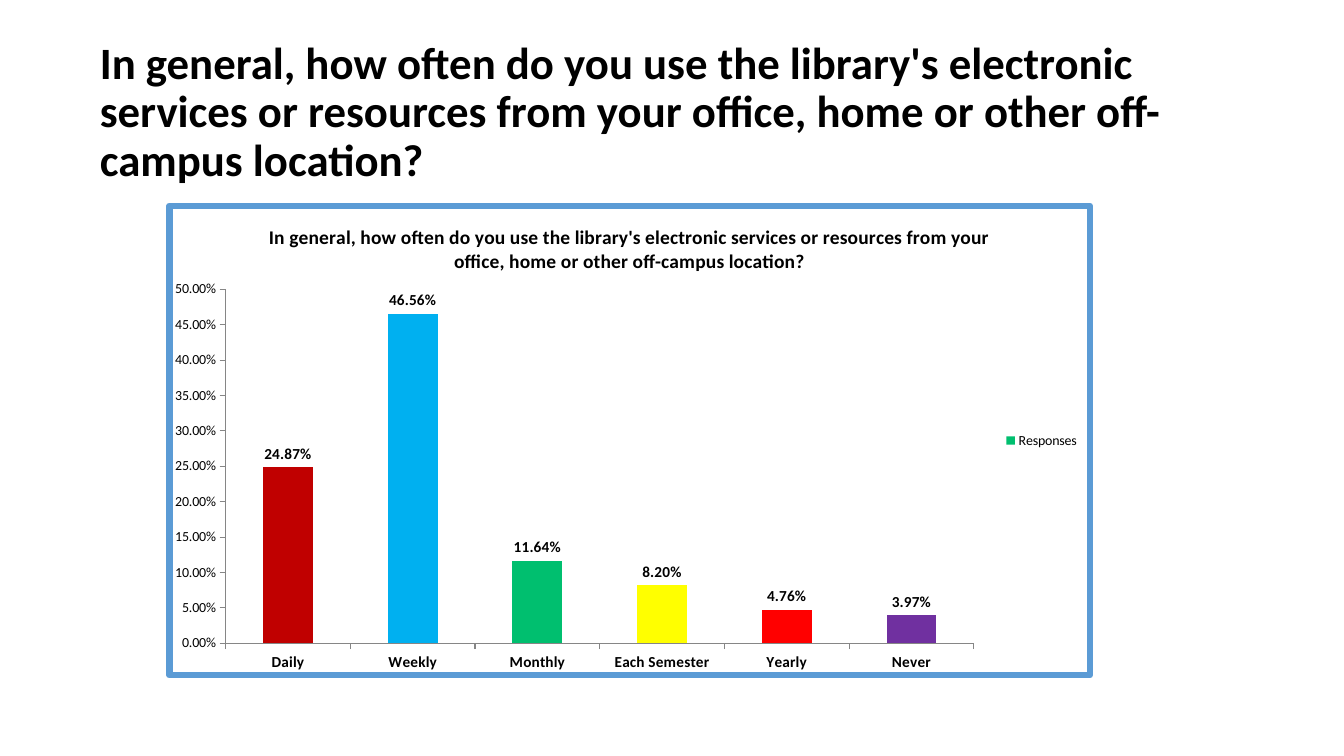
from lxml import etree
from pptx import Presentation
from pptx.chart.data import CategoryChartData
from pptx.dml.color import RGBColor
from pptx.enum.chart import XL_CHART_TYPE as ChartType
from pptx.enum.chart import XL_LABEL_POSITION as LabelPosition
from pptx.enum.chart import XL_LEGEND_POSITION as LegendPosition
from pptx.enum.chart import XL_TICK_MARK as TickMark
from pptx.enum.text import MSO_ANCHOR, MSO_AUTO_SIZE, PP_ALIGN
from pptx.oxml import parse_xml
from pptx.oxml.ns import nsdecls, qn
from pptx.util import Inches, Pt

COLORS = {
    "text": "000000",
    "axis": "868686",
    "border": "5B9BD5",
    "responses": "00BF6F",
    "Daily": "C00000",
    "Weekly": "00B0F0",
    "Each Semester": "FFFF00",
    "Yearly": "FF0000",
    "Never": "7030A0",
}
SHARES = {
    "Daily": 0.2487,
    "Weekly": 0.4656,
    "Monthly": 0.1164,
    "Each Semester": 0.082,
    "Yearly": 0.0476,
    "Never": 0.0397,
}
QUESTION = (
    "In general, how often do you use the library's electronic services "
    "or resources from your office, home or other off-campus location?"
)
PERCENT = "0.00%"


def style_font(font, size, bold=False):
    font.name = "Calibri"
    font.size = Pt(size)
    font.bold = bold
    font.color.rgb = RGBColor.from_string(COLORS["text"])


def write_text(frame, text, size, bold=True, align=PP_ALIGN.LEFT, spacing=None):
    paragraph = frame.paragraphs[0]
    paragraph.alignment = align
    paragraph.line_spacing = spacing
    run = paragraph.add_run()
    run.text = text
    style_font(run.font, size, bold)


prs = Presentation()
prs.slide_width = Inches(13.33)
prs.slide_height = Inches(7.5)
slide = prs.slides.add_slide(prs.slide_layouts[5])

# Heading
heading = slide.shapes.title
heading.left, heading.top = Inches(0.89), Inches(0.4)
heading.width, heading.height = Inches(11.53), Inches(1.45)
heading.text_frame.word_wrap = True
heading.text_frame.auto_size = MSO_AUTO_SIZE.NONE
heading.text_frame.vertical_anchor = MSO_ANCHOR.MIDDLE
write_text(heading.text_frame, QUESTION, size=32, spacing=0.9)

# Chart of answers
answers = CategoryChartData(number_format=PERCENT)
answers.categories = list(SHARES)
answers.add_series("Responses", list(SHARES.values()))
chart = slide.shapes.add_chart(
    ChartType.COLUMN_CLUSTERED,
    Inches(1.65), Inches(2.01), Inches(9.19), Inches(4.72), answers,
).chart
style_font(chart.font, 10)
chart.has_title = True
write_text(chart.chart_title.text_frame, QUESTION, size=14, align=PP_ALIGN.CENTER)
chart.chart_title.include_in_layout = False
chart.has_legend = True
chart.legend.position = LegendPosition.RIGHT
chart.legend.include_in_layout = False
style_font(chart.legend.font, 10)

# Axes
frequency_axis, share_axis = chart.category_axis, chart.value_axis
for axis, size, bold in ((frequency_axis, 11, True), (share_axis, 10, False)):
    axis.has_major_gridlines = False
    axis.major_tick_mark = TickMark.OUTSIDE
    axis.minor_tick_mark = TickMark.NONE
    axis.format.line.color.rgb = RGBColor.from_string(COLORS["axis"])
    axis.format.line.width = Pt(0.75)
    style_font(axis.tick_labels.font, size, bold)
share_axis.minimum_scale = 0
share_axis.maximum_scale = 0.5
share_axis.major_unit = 0.05
share_axis.tick_labels.number_format = PERCENT
share_axis.tick_labels.number_format_is_linked = False

# Columns and their labels
columns = chart.plots[0]
columns.gap_width = 150
columns.vary_by_categories = False
responses = columns.series[0]
responses.invert_if_negative = False
responses.format.fill.solid()
responses.format.fill.fore_color.rgb = RGBColor.from_string(COLORS["responses"])
for index, frequency in enumerate(SHARES):
    if frequency in COLORS:
        fill = responses.points[index].format.fill
        fill.solid()
        fill.fore_color.rgb = RGBColor.from_string(COLORS[frequency])
labels = responses.data_labels
labels.show_value = True
labels.number_format = PERCENT
labels.number_format_is_linked = False
labels.position = LabelPosition.OUTSIDE_END
style_font(labels.font, 11, bold=True)

# Fixed plot area
plot_area = chart.element.find(".//" + qn("c:plotArea"))
for old_layout in plot_area.findall(qn("c:layout")):
    plot_area.remove(old_layout)
layout = etree.Element(qn("c:layout"))
manual = etree.SubElement(layout, qn("c:manualLayout"))
for tag, value in (
    ("layoutTarget", "inner"), ("xMode", "edge"), ("yMode", "edge"),
    ("x", "0.061"), ("y", "0.178"), ("w", "0.813"), ("h", "0.754"),
):
    etree.SubElement(manual, qn("c:" + tag)).set("val", value)
plot_area.insert(0, layout)

# Frame around the chart
chart.element.find(qn("c:chart")).addnext(parse_xml(
    f'<c:spPr {nsdecls("c", "a")}><a:noFill/><a:ln w="{Pt(4.5)}"><a:solidFill>'
    f'<a:srgbClr val="{COLORS["border"]}"/></a:solidFill></a:ln></c:spPr>'
))

prs.save("out.pptx")
